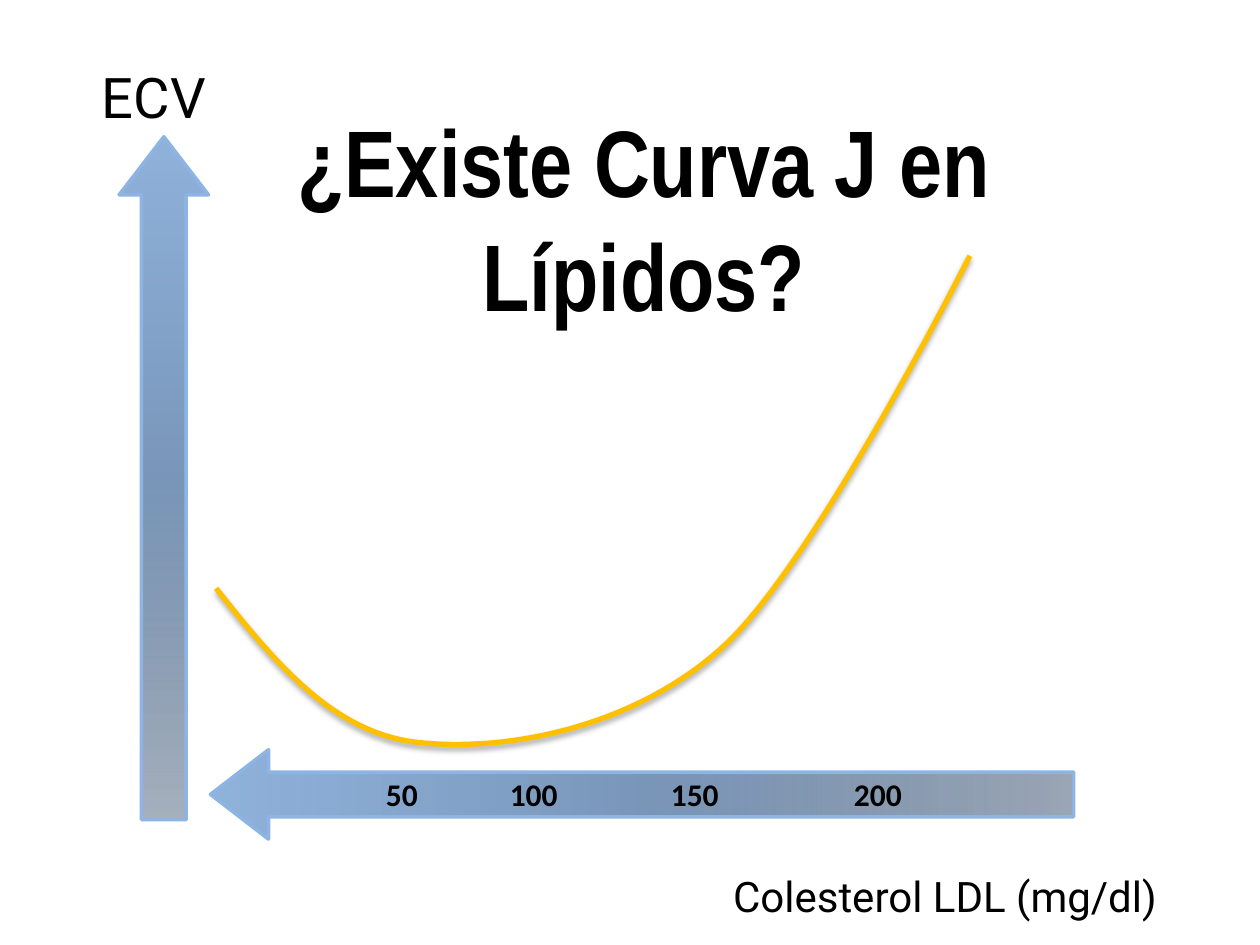
from dataclasses import dataclass

from lxml.etree import SubElement
from pptx import Presentation
from pptx.dml.color import RGBColor
from pptx.enum.shapes import MSO_SHAPE
from pptx.enum.text import MSO_ANCHOR, PP_ALIGN
from pptx.oxml import parse_xml
from pptx.oxml.ns import nsdecls, qn
from pptx.shapes.autoshape import Shape
from pptx.slide import Slide
from pptx.text.text import TextFrame
from pptx.util import Pt

Point = tuple[float, float]


@dataclass(frozen=True)
class Theme:
    text: str = "000000"
    axis_line: str = "8EB4E3"
    axis_dark: str = "566A83"
    axis_middle: str = "7A97BA"
    axis_light: str = "90B3DC"
    curve: str = "FFC000"
    title_font: str = "Arial Narrow"
    label_font: str = "Roboto"
    tick_font: str = "Calibri"
    title_size: float = 54
    vertical_label_size: float = 32
    horizontal_label_size: float = 24
    tick_size: float = 18
    axis_width: float = 2
    curve_width: float = 3


@dataclass(frozen=True)
class Box:
    left: float
    top: float
    width: float
    height: float

    def lengths(self) -> list[Pt]:
        return [Pt(value) for value in (self.left, self.top, self.width, self.height)]


@dataclass(frozen=True)
class Axis:
    box: Box
    rotation: float
    tail_opacity: int


@dataclass(frozen=True)
class Label:
    text: str
    box: Box
    font: str
    size: float
    bold: bool = False
    align: PP_ALIGN = PP_ALIGN.LEFT


THEME = Theme()

HORIZONTAL_AXIS = Axis(Box(120.24, 428.4, 493.2, 51.12), 0, 59)
VERTICAL_AXIS = Axis(Box(-101.5, 247.7, 390.24, 51.12), 90, 52)

# Tick centres, measured from the left edge of the arrow's text area
TICKS = {"50": 85.7, "100": 161.1, "150": 253.1, "200": 357.7}

LABELS = [
    Label("ECV", Box(51.1, 32.4, 85, 46), THEME.label_font, THEME.vertical_label_size),
    Label("Colesterol LDL (mg/dl)", Box(411.84, 493.9, 306, 36),
          THEME.label_font, THEME.horizontal_label_size),
    Label("¿Existe Curva J en Lípidos?", Box(136.1, 55.4, 463.7, 138.2),
          THEME.title_font, THEME.title_size, True, PP_ALIGN.CENTER),
]

# Each curve section: two control points and an end point
CURVE_START: Point = (123.5, 336.2)
CURVE_SECTIONS: list[tuple[Point, Point, Point]] = [
    ((156.2, 377.3), (189.4, 418.3), (237.6, 424.1)),
    ((285.8, 429.8), (358.6, 417.6), (411.1, 371.5)),
    ((464.4, 325.4), (554.2, 146.2), (554.2, 146.2)),
]
STEPS = 30


def write_text(frame: TextFrame, text: str, *, font: str, size: float,
               bold: bool = False, align: PP_ALIGN = PP_ALIGN.LEFT) -> None:
    frame.word_wrap = True
    paragraph = frame.paragraphs[0]
    paragraph.alignment = align
    run = paragraph.add_run()
    run.text = text
    run.font.name = font
    run.font.size = Pt(size)
    run.font.bold = bold
    run.font.color.rgb = RGBColor.from_string(THEME.text)


def set_line(shape: Shape, color: str, width: float) -> None:
    shape.line.color.rgb = RGBColor.from_string(color)
    shape.line.width = Pt(width)
    shape.shadow.inherit = False


def add_axis(slide: Slide, axis: Axis) -> Shape:
    shape = slide.shapes.add_shape(MSO_SHAPE.LEFT_ARROW, *axis.box.lengths())
    shape.adjustments[0] = 0.5
    shape.adjustments[1] = 0.65
    shape.rotation = axis.rotation
    set_line(shape, THEME.axis_line, THEME.axis_width)

    # Gradient from a translucent tail to a solid head
    stops = [(0, THEME.axis_dark, axis.tail_opacity),
             (50, THEME.axis_middle, 100), (100, THEME.axis_light, 100)]
    stop_xml = "".join(
        f'<a:gs pos="{position * 1000}"><a:srgbClr val="{color}">'
        f'<a:alpha val="{opacity * 1000}"/></a:srgbClr></a:gs>'
        for position, color, opacity in stops)
    gradient = parse_xml(
        f'<a:gradFill {nsdecls("a")} rotWithShape="1"><a:gsLst>{stop_xml}</a:gsLst>'
        f'<a:lin ang="{180 * 60000}" scaled="0"/></a:gradFill>')
    shape.fill.background()
    properties = shape.element.spPr
    properties.replace(properties.find(qn("a:noFill")), gradient)
    return shape


def add_ticks(shape: Shape, ticks: dict[str, float]) -> None:
    frame = shape.text_frame
    frame.vertical_anchor = MSO_ANCHOR.MIDDLE
    write_text(frame, "".join(f"\t{tick}" for tick in ticks),
               font=THEME.tick_font, size=THEME.tick_size, bold=True)
    properties = frame.paragraphs[0]._p.get_or_add_pPr()
    tab_list = SubElement(properties, qn("a:tabLst"))
    for position in ticks.values():
        SubElement(tab_list, qn("a:tab"), pos=str(int(Pt(position))), algn="ctr")


def curve_points() -> list[Point]:
    points, start = [], CURVE_START
    for first, second, end in CURVE_SECTIONS:
        for step in range(1, STEPS + 1):
            t = step / STEPS
            u = 1 - t
            weights = (u**3, 3 * u**2 * t, 3 * u * t**2, t**3)
            corners = (start, first, second, end)
            points.append(tuple(
                sum(weight * corner[axis] for weight, corner in zip(weights, corners))
                for axis in (0, 1)))
        start = end
    return points


def add_curve(slide: Slide) -> None:
    builder = slide.shapes.build_freeform(*(Pt(value) for value in CURVE_START))
    builder.add_line_segments([(Pt(x), Pt(y)) for x, y in curve_points()], close=False)
    shape = builder.convert_to_shape()
    shape.fill.background()
    set_line(shape, THEME.curve, THEME.curve_width)

    # Soft shadow below the curve
    effects = shape.element.spPr.find(qn("a:effectLst"))
    effects.append(parse_xml(
        f'<a:outerShdw {nsdecls("a")} blurRad="{int(Pt(3.1))}" dist="{int(Pt(1.8))}" '
        f'dir="{90 * 60000}" rotWithShape="0"><a:srgbClr val="{THEME.text}">'
        '<a:alpha val="35000"/></a:srgbClr></a:outerShdw>'))


def add_label(slide: Slide, label: Label) -> None:
    text_box = slide.shapes.add_textbox(*label.box.lengths())
    write_text(text_box.text_frame, label.text, font=label.font, size=label.size,
               bold=label.bold, align=label.align)


def main() -> None:
    presentation = Presentation()
    presentation.slide_width, presentation.slide_height = Pt(720), Pt(540)
    slide = presentation.slides.add_slide(presentation.slide_layouts[6])

    # Axes
    add_ticks(add_axis(slide, HORIZONTAL_AXIS), TICKS)
    add_axis(slide, VERTICAL_AXIS)

    # J curve
    add_curve(slide)

    # Axis names and title
    for label in LABELS:
        add_label(slide, label)

    presentation.save("out.pptx")


if __name__ == "__main__":
    main()
